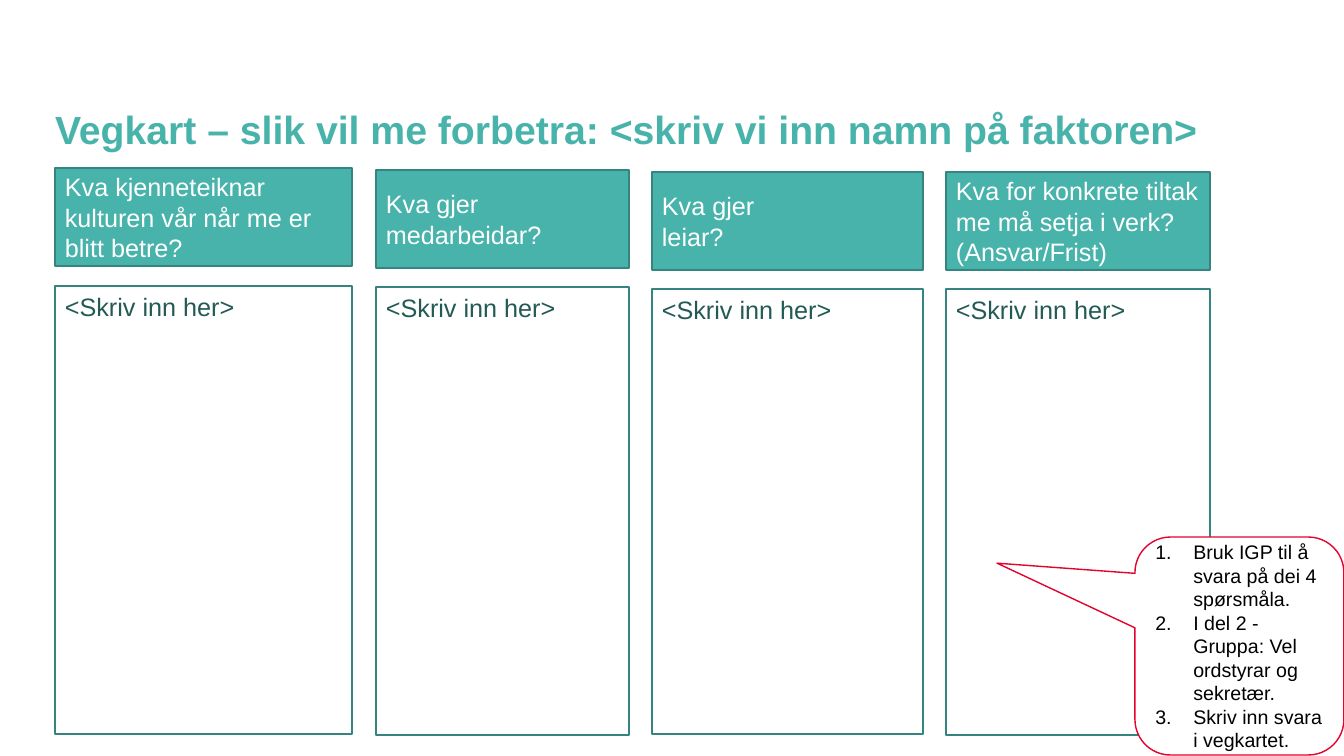
from lxml.etree import SubElement
from pptx import Presentation
from pptx.dml.color import RGBColor
from pptx.enum.shapes import MSO_SHAPE as Shape
from pptx.enum.text import MSO_ANCHOR as Anchor, MSO_AUTO_SIZE as Fit, PP_ALIGN as Align
from pptx.oxml.ns import qn
from pptx.util import Pt

PX = 914400 / 100.8
HUES = {"teal": "48B3AB", "edge": "35847F", "dark": "245A56",
        "white": "FFFFFF", "red": "E3032E", "black": "000000"}


def style(frame, size, hue, anchor, bold=False):
    frame.word_wrap = True
    frame.auto_size = Fit.NONE
    frame.vertical_anchor = anchor
    for para in frame.paragraphs:
        para.alignment = Align.LEFT
        for run in para.runs:
            font = run.font
            font.name, font.size, font.bold = "Arial", Pt(size), bold
            font.color.rgb = RGBColor.from_string(HUES[hue])


def add_box(kind, area, fill, line):
    box = slide.shapes.add_shape(kind, *(round(n * PX) for n in area))
    box.shadow.inherit = False
    if fill:
        box.fill.solid()
        box.fill.fore_color.rgb = RGBColor.from_string(HUES[fill])
    else:
        box.fill.background()
    box.line.color.rgb = RGBColor.from_string(HUES[line])
    box.line.width = Pt(1)
    return box


deck = Presentation()
deck.slide_width, deck.slide_height = round(1344 * PX), round(756 * PX)
slide = deck.slides.add_slide(deck.slide_layouts[5])

# Title
title = slide.shapes.title
title.left, title.top, title.width, title.height = (
    round(n * PX) for n in (55, 85, 1233, 68))
frame = title.text_frame
frame.text = "Vegkart – slik vil me forbetra: <skriv vi inn namn på faktoren>"
frame.margin_left = frame.margin_right = frame.margin_top = frame.margin_bottom = 0
frame.paragraphs[0].line_spacing = 0.9
style(frame, 28, "teal", Anchor.BOTTOM, True)

# Columns: left, width, head top, field top, field height, question
columns = [
    (55, 297, 168, 286, 448, "Kva kjenneteiknar kulturen vår når me er blitt betre?"),
    (376, 253, 170, 287, 448, "Kva gjer medarbeidar?"),
    (652, 271, 172, 289, 445, "Kva gjer\nleiar?"),
    (946, 264, 172, 289, 446, "Kva for konkrete tiltak me må setja i verk? (Ansvar/Frist)"),
]
for left, width, top, low, tall, question in columns:
    head = add_box(Shape.RECTANGLE, (left, top, width, 98), "teal", "edge")
    head.text_frame.text = question
    style(head.text_frame, 18, "white", Anchor.MIDDLE)
    field = add_box(Shape.RECTANGLE, (left, low, width, tall), None, "edge")
    field.text_frame.text = "<Skriv inn her>"
    style(field.text_frame, 18, "dark", Anchor.TOP)

# Callout with numbered steps
steps = ["Bruk IGP til å svara på dei 4 spørsmåla.",
         "I del 2 - Gruppa: Vel ordstyrar og sekretær.",
         "Skriv inn svara i vegkartet."]
callout = add_box(Shape.ROUNDED_RECTANGULAR_CALLOUT, (1135, 537, 209, 218), "white", "red")
for spot, value in enumerate((-1.16, -0.38, 0.17)):
    callout.adjustments[spot] = value
callout.text_frame.text = "\n".join(steps)
for para in callout.text_frame.paragraphs:
    props = para._p.get_or_add_pPr()
    props.set("marL", str(round(38 * PX)))
    props.set("indent", str(round(-38 * PX)))
    SubElement(props, qn("a:buFont"), typeface="+mj-lt")
    SubElement(props, qn("a:buAutoNum"), type="arabicPeriod")
style(callout.text_frame, 14, "black", Anchor.MIDDLE)

deck.save("out.pptx")
